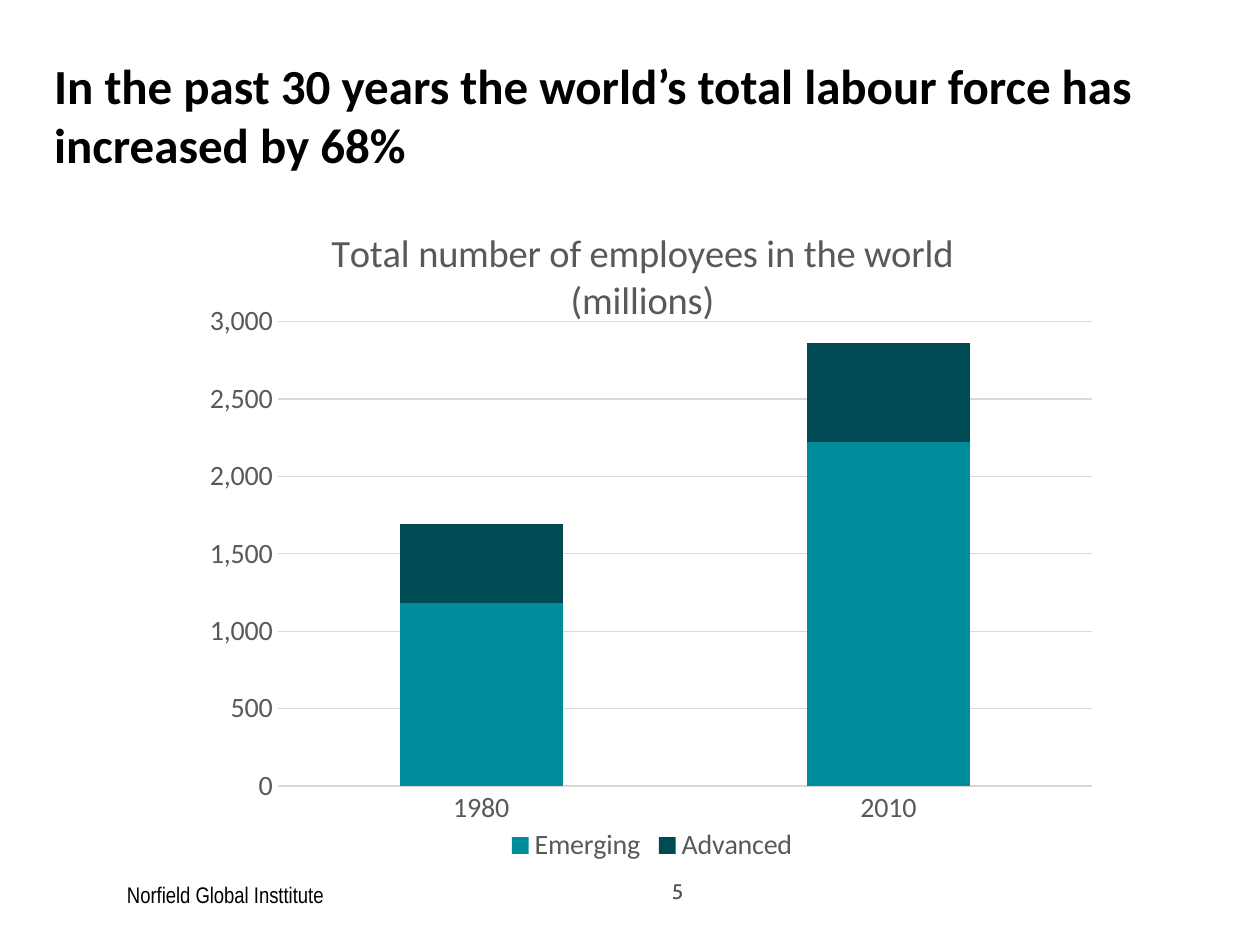
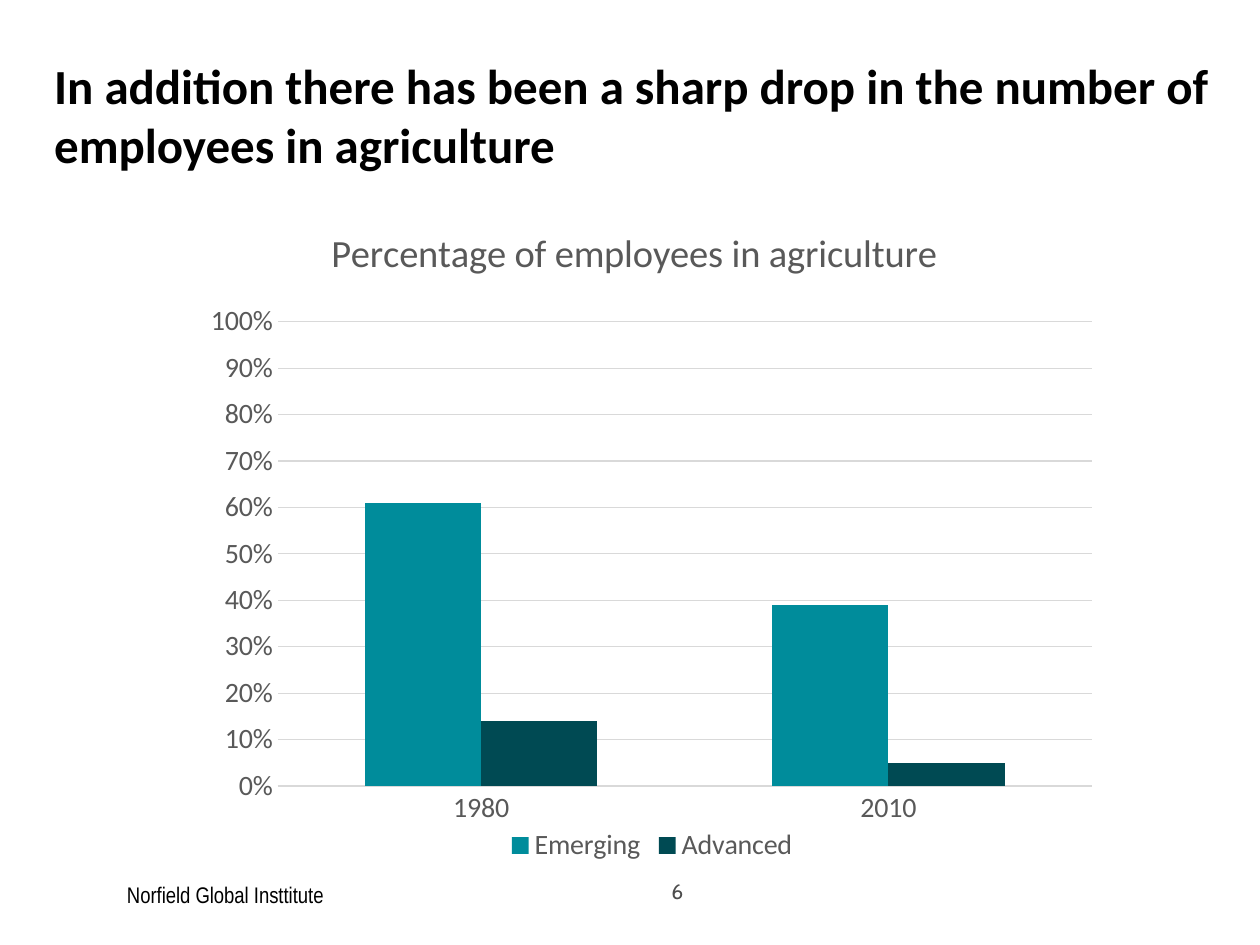
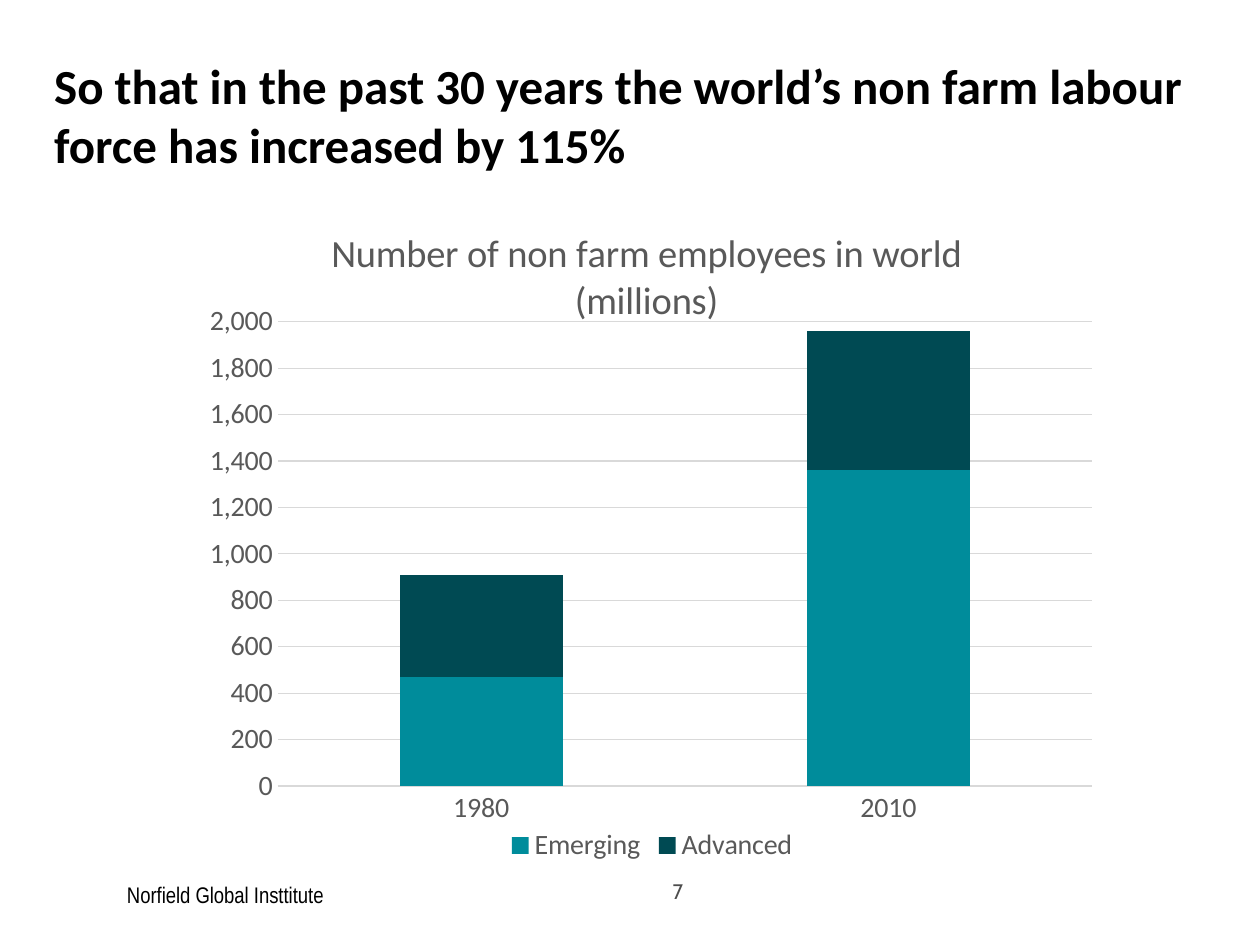
from lxml.etree import SubElement
from pptx import Presentation
from pptx.chart.data import CategoryChartData
from pptx.dml.color import RGBColor
from pptx.enum.chart import XL_CHART_TYPE, XL_LEGEND_POSITION, XL_TICK_MARK
from pptx.enum.text import MSO_ANCHOR, PP_ALIGN
from pptx.oxml.ns import qn
from pptx.util import Inches, Pt

TEAL, DARK_TEAL, GRAY, GRID, BLACK = "008C9B", "004A53", "595959", "D9D9D9", "000000"
STACKED, CLUSTERED = XL_CHART_TYPE.COLUMN_STACKED, XL_CHART_TYPE.COLUMN_CLUSTERED
FIRST_NUMBER = 5

SLIDES = [
    ("In the past 30 years the world’s total labour force has increased by 68%",
     "Total number of employees in the world (millions)",
     STACKED, "#,##0", 3000, 500, [1180, 2220], [510, 640]),
    ("In addition there has been a sharp drop in the number of employees in agriculture",
     "Percentage of employees in agriculture",
     CLUSTERED, "0%", 1, 0.1, [0.61, 0.39], [0.14, 0.05]),
    ("So that in the past 30 years the world’s non farm labour force has increased by 115%",
     "Number of non farm employees in world (millions)",
     STACKED, "#,##0", 2000, 200, [470, 1360], [440, 600]),
]


def style_font(font, size, color, name="Calibri", bold=False):
    font.size, font.name, font.bold = Pt(size), name, bold
    font.color.rgb = RGBColor.from_string(color)


def write(frame, text, size, color=BLACK, name="Calibri", bold=False,
          align=PP_ALIGN.LEFT):
    para = frame.paragraphs[0]
    para.alignment = align
    span = para.add_run()
    span.text = text
    style_font(span.font, size, color, name, bold)


deck = Presentation()
deck.slide_width, deck.slide_height = Inches(10), Inches(7.5)

for number, (headline, chart_name, kind, number_format, top, step, emerging, advanced) in enumerate(
        SLIDES, FIRST_NUMBER):
    page = deck.slides.add_slide(deck.slide_layouts[5])

    title = page.shapes.title
    title.left, title.top = Inches(0.43), Inches(0.44)
    title.width, title.height = Inches(9.71), Inches(0.64)
    frame = title.text_frame
    frame.margin_left = frame.margin_top = frame.margin_right = frame.margin_bottom = 0
    frame.vertical_anchor = MSO_ANCHOR.TOP
    write(frame, headline, 28, bold=True)

    number_box = page.shapes.add_textbox(Inches(4.44), Inches(6.94), Inches(1.08), Inches(0.27))
    number_box.text_frame.word_wrap = True
    number_box.text_frame.vertical_anchor = MSO_ANCHOR.MIDDLE
    write(number_box.text_frame, str(number), 12, "4D4D4D", "Cabin", align=PP_ALIGN.RIGHT)

    source_box = page.shapes.add_textbox(Inches(0.91), Inches(6.94), Inches(5.33), Inches(0.32))
    source_box.text_frame.word_wrap = True
    write(source_box.text_frame, "Norfield Global Insttitute", 12.9, name="Arial Narrow")

    data = CategoryChartData(number_format=number_format)
    data.categories = ["1980", "2010"]
    data.add_series("Emerging", emerging)
    data.add_series("Advanced", advanced)
    chart = page.shapes.add_chart(
        kind, Inches(1.46), Inches(1.47), Inches(7.43), Inches(5.42), data).chart
    style_font(chart.font, 10, BLACK)

    chart.has_title = True
    write(chart.chart_title.text_frame, chart_name, 22, GRAY, align=PP_ALIGN.CENTER)
    chart.has_legend = True
    chart.legend.position = XL_LEGEND_POSITION.BOTTOM
    chart.legend.include_in_layout = False
    style_font(chart.legend.font, 16, GRAY)

    plot = chart.plots[0]
    plot.gap_width = 150
    plot.overlap = 100 if kind == STACKED else 0
    plot.vary_by_categories = False
    for series, color in zip(plot.series, (TEAL, DARK_TEAL)):
        series.format.fill.solid()
        series.format.fill.fore_color.rgb = RGBColor.from_string(color)

    categories, values = chart.category_axis, chart.value_axis
    for axis in (categories, values):
        axis.major_tick_mark = axis.minor_tick_mark = XL_TICK_MARK.NONE
        style_font(axis.tick_labels.font, 16, GRAY)
    values.minimum_scale, values.maximum_scale, values.major_unit = 0, top, step
    values.tick_labels.number_format = number_format
    values.tick_labels.number_format_is_linked = False
    values.format.line.fill.background()
    values.has_major_gridlines = True
    for line in (categories.format.line, values.major_gridlines.format.line):
        line.width = Pt(0.75)
        line.color.rgb = RGBColor.from_string(GRID)

    plot_area = chart.element.find(".//" + qn("c:plotArea"))
    chart_title = chart.element.find(".//" + qn("c:title"))
    for parent, index, settings in (
            (plot_area, 0, {"layoutTarget": "inner", "xMode": "edge", "yMode": "edge",
                            "x": 0.1, "y": 0.2, "w": 0.87, "h": 0.68}),
            (chart_title, 1, {"xMode": "edge", "yMode": "edge", "x": 0.15, "y": 0.05})):
        for layout in parent.findall(qn("c:layout")):
            parent.remove(layout)
        layout = SubElement(parent, qn("c:layout"))
        manual = SubElement(layout, qn("c:manualLayout"))
        for key, value in settings.items():
            SubElement(manual, qn("c:" + key)).set("val", str(value))
        parent.insert(index, layout)

deck.save("out.pptx")
